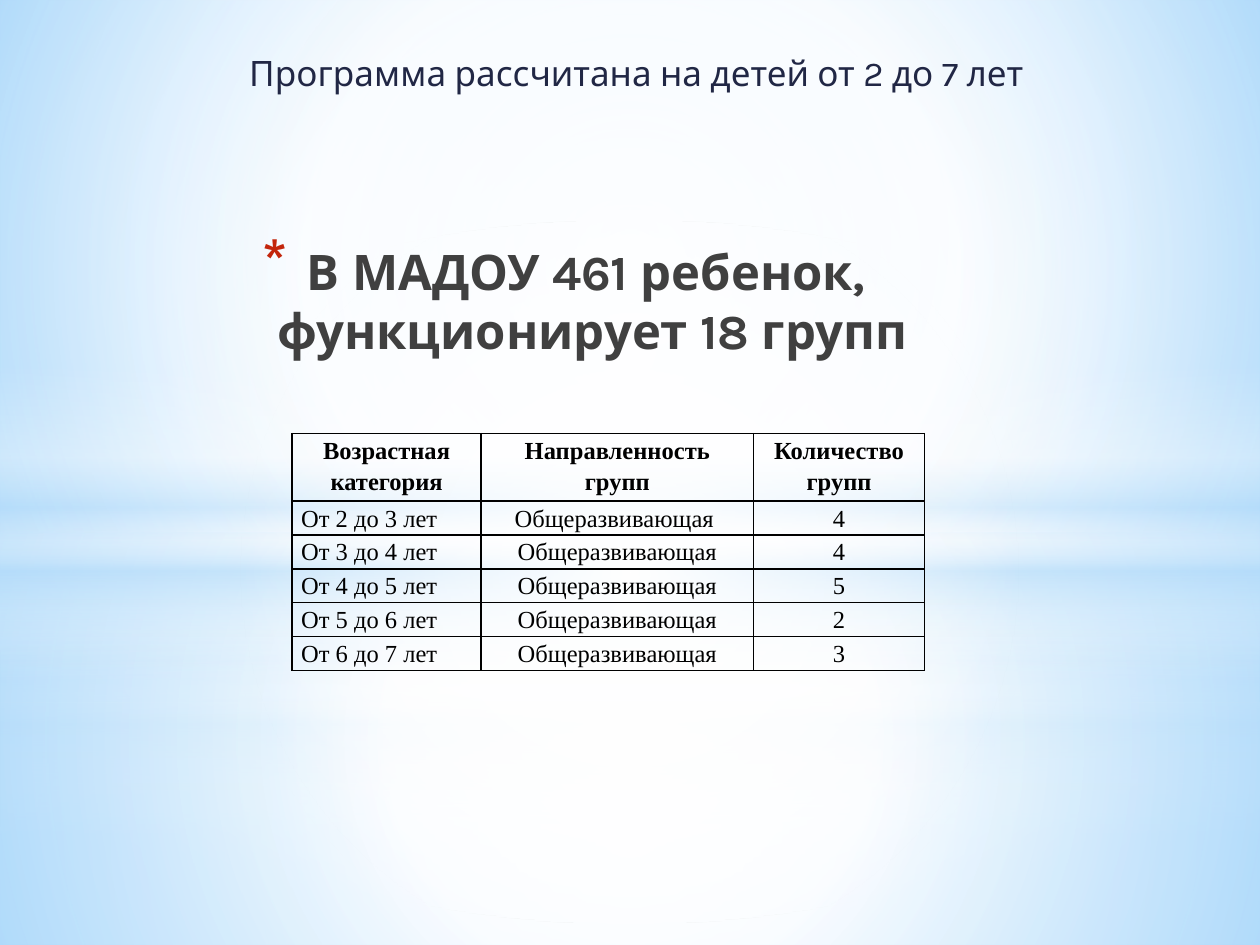
from lxml.etree import SubElement, fromstring
from pptx import Presentation
from pptx.dml.color import RGBColor
from pptx.enum.shapes import MSO_SHAPE
from pptx.enum.text import MSO_ANCHOR, PP_ALIGN
from pptx.oxml.ns import nsdecls, qn
from pptx.util import Cm, Pt

HEADLINE = "Программа рассчитана на детей от 2 до 7 лет"
SUMMARY = "В МАДОУ 461 ребенок, \vфункционирует 18 групп"
HEADER = ("Возрастная категория", "Направленность групп", "Количество групп")
GROUPS = [
    ("От 2 до 3 лет", "Общеразвивающая ", "4"),
    ("От 3 до 4 лет", "Общеразвивающая", "4"),
    ("От 4 до 5 лет", "Общеразвивающая", "5"),
    ("От 5 до 6 лет", "Общеразвивающая", "2"),
    ("От 6 до 7 лет", "Общеразвивающая", "3"),
]

THEME = {
    "headline": {"name": "Karla", "size": Pt(20), "color": "212745"},
    "summary": {"name": "Karla", "size": Pt(28), "bold": True, "color": "404040"},
    "header": {"name": "Times New Roman", "size": Pt(14), "bold": True, "color": "000000"},
    "body": {"name": "Times New Roman", "size": Pt(14), "bold": False, "color": "000000"},
    "bullet": "C3260C",
    "border": "000000",
    "white": "FFFFFF",
    "sky": "B4DCFA",
}
WHITE, SKY = THEME["white"], THEME["sky"]
PAGE_WIDTH, PAGE_HEIGHT = 25.4, 19.05

# Gradient stops: position %, colour, opacity %
BACKDROP = [(0, "9ED5FF", 100), (60, WHITE, 100), (100, "5BB9FF", 100)]
BAND = [(0, WHITE, 0), (29, WHITE, 30), (45, SKY, 40),
        (55, WHITE, 26), (65, SKY, 60), (100, WHITE, 0)]


def haze(middle, *opacities):
    return list(zip((0, middle, 100), (WHITE, WHITE, SKY), opacities))


def glow(end):
    return [(0, WHITE, 100), (end, WHITE, 0)]


# Full-width layers, back to front: shape, top, height, stops, linear gradient
RECTANGLE, OVAL = MSO_SHAPE.RECTANGLE, MSO_SHAPE.OVAL
LAYERS = [
    (RECTANGLE, 14.17, 4.88, haze(37, 91, 76, 79), False),
    (RECTANGLE, 0, 14.17, haze(48, 89, 62, 79), False),
    (RECTANGLE, 10.46, 6.35, BAND, True),
    (OVAL, 4.45, 14.17, glow(56), False),
    (RECTANGLE, 10.74, 8.31, haze(37, 92, 77, 80), False),
    (RECTANGLE, 0, 10.74, haze(48, 90, 63, 80), False),
    (RECTANGLE, 7.37, 6.35, BAND, True),
    (OVAL, 4.45, 14.17, glow(54), False),
]


def set_gradient(owner, stops, linear=False, focus=(50, 50, 50, 50)):
    """Replace the empty fill of an XML owner; focus is left, top, right, bottom in %."""
    marks = "".join(
        f'<a:gs pos="{position * 1000}"><a:srgbClr val="{color}">'
        f'<a:alpha val="{opacity * 1000}"/></a:srgbClr></a:gs>'
        for position, color, opacity in stops)
    if linear:
        direction = '<a:lin ang="5400000" scaled="0"/>'
    else:
        sides = " ".join(f'{side}="{value * 1000}"' for side, value in zip("ltrb", focus))
        direction = f'<a:path path="circle"><a:fillToRect {sides}/></a:path>'
    gradient = fromstring(f'<a:gradFill {nsdecls("a")} rotWithShape="1">'
                          f'<a:gsLst>{marks}</a:gsLst>{direction}</a:gradFill>')
    owner.replace(owner.find(qn("a:noFill")), gradient)


def apply(target, values):
    for name, value in values.items():
        setattr(target, name, value)


def write(para, text, style, **format_values):
    para.text = text
    apply(para, format_values)
    font = dict(THEME[style])
    color = font.pop("color")
    for span in para.runs:
        apply(span.font, font)
        span.font.color.rgb = RGBColor.from_string(color)


def add_text(page, left, top, width, height, **frame_values):
    box = page.shapes.add_textbox(Cm(left), Cm(top), Cm(width), Cm(height))
    apply(box.text_frame, {"word_wrap": True, **frame_values})
    return box.text_frame.paragraphs[0]


def add_bullet(para, character, color, percent, indent):
    properties = para._p.get_or_add_pPr()
    properties.set("marL", str(Cm(indent)))
    properties.set("indent", str(-Cm(indent)))
    SubElement(SubElement(properties, qn("a:buClr")), qn("a:srgbClr"), val=color)
    SubElement(properties, qn("a:buSzPct"), val=str(percent * 1000))
    SubElement(properties, qn("a:buChar"), char=character)


def add_borders(cell, color):
    properties = cell._tc.get_or_add_tcPr()
    for index, side in enumerate(("lnL", "lnR", "lnT", "lnB")):
        line = fromstring(f'<a:{side} {nsdecls("a")} w="{Pt(1)}"><a:solidFill>'
                          f'<a:srgbClr val="{color}"/></a:solidFill></a:{side}>')
        properties.insert(index, line)


def add_background(page):
    page.background.fill.background()
    set_gradient(page.element.find(".//" + qn("p:bgPr")), BACKDROP, focus=(20, 10, 20, 60))
    for kind, top, height, stops, linear in LAYERS:
        layer = page.shapes.add_shape(kind, 0, Cm(top), Cm(PAGE_WIDTH), Cm(height))
        layer.shadow.inherit = False
        layer.line.fill.background()
        layer.fill.background()
        set_gradient(layer.element.spPr, stops, linear)


def add_group_table(page):
    rows, widths, row_height = [HEADER, *GROUPS], (3.81, 5.49, 3.45), 0.62
    table = page.shapes.add_table(
        len(rows), len(widths), Cm(5.89), Cm(8.74),
        Cm(sum(widths)), Cm(row_height * (len(rows) + 1))).table
    apply(table, {"first_row": False, "horz_banding": False})
    for column, width in zip(table.columns, widths):
        column.width = Cm(width)
    for row_index, values in enumerate(rows):
        is_header = row_index == 0
        table.rows[row_index].height = Cm(row_height * (2 if is_header else 1))
        for column_index, text in enumerate(values):
            cell = table.cell(row_index, column_index)
            apply(cell, {"margin_left": Cm(0.18), "margin_right": Cm(0.18),
                         "margin_top": 0, "margin_bottom": 0})
            cell.fill.background()
            add_borders(cell, THEME["border"])
            centred = is_header or column_index > 0
            write(cell.text_frame.paragraphs[0], text, "header" if is_header else "body",
                  alignment=PP_ALIGN.CENTER if centred else PP_ALIGN.LEFT,
                  line_spacing=1.15)


def main():
    deck = Presentation()
    apply(deck, {"slide_width": Cm(PAGE_WIDTH), "slide_height": Cm(PAGE_HEIGHT)})
    page = deck.slides.add_slide(deck.slide_layouts[6])
    add_background(page)

    summary = add_text(page, 0.89, 2.34, 21.21, 6.2,
                       vertical_anchor=MSO_ANCHOR.BOTTOM, margin_bottom=Cm(1.3))
    write(summary, SUMMARY, "summary", alignment=PP_ALIGN.CENTER)
    add_bullet(summary, "*", THEME["bullet"], percent=128, indent=0.89)

    headline = add_text(page, 4.29, 0.91, 16.59, 2.31)
    write(headline, HEADLINE, "headline", alignment=PP_ALIGN.RIGHT, space_after=Pt(3))

    add_group_table(page)
    deck.save("out.pptx")


if __name__ == "__main__":
    main()
